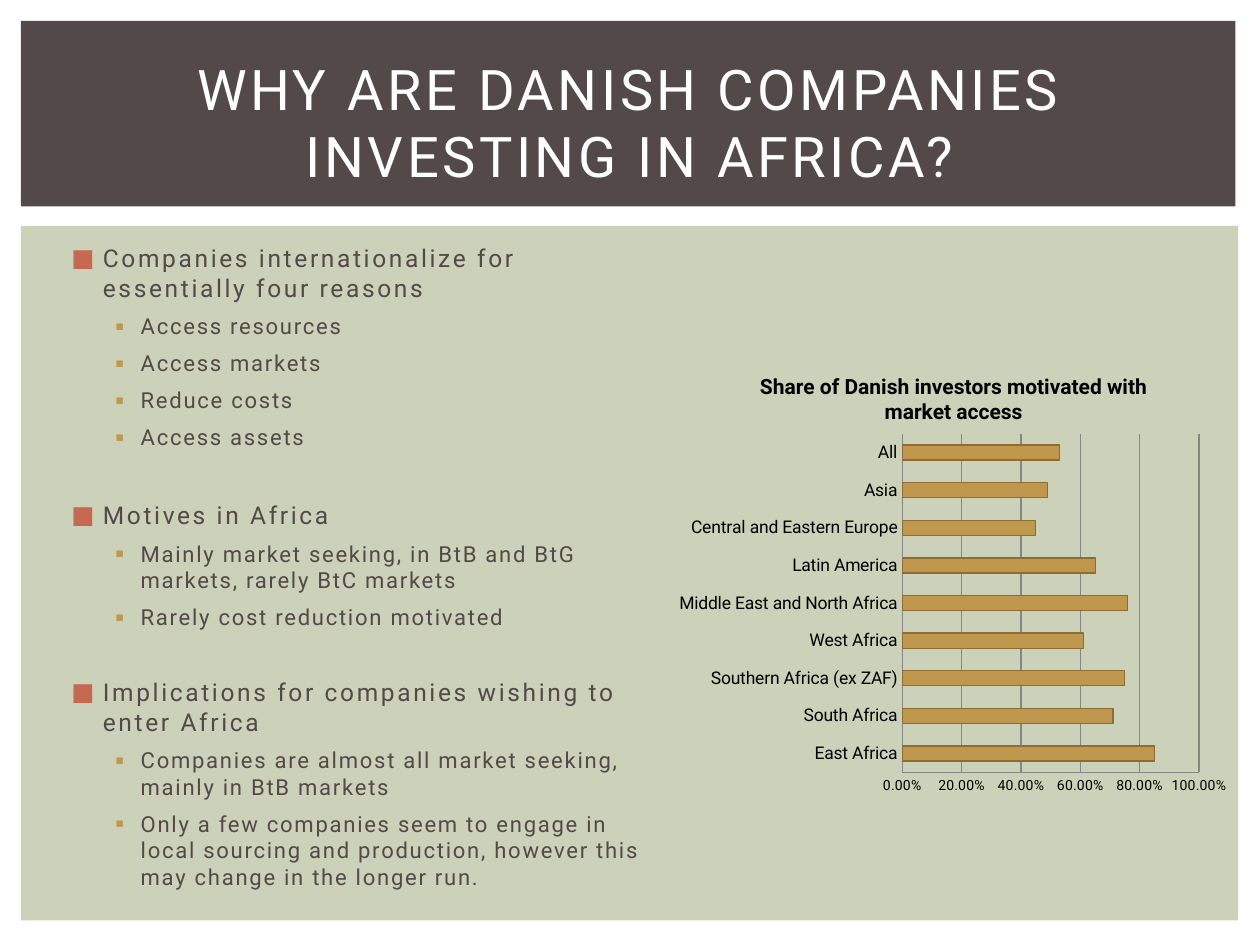
from lxml import etree
from pptx import Presentation
from pptx.chart.data import CategoryChartData
from pptx.dml.color import RGBColor
from pptx.enum.chart import XL_CHART_TYPE, XL_TICK_MARK
from pptx.enum.shapes import MSO_SHAPE
from pptx.enum.text import MSO_ANCHOR, MSO_AUTO_SIZE, PP_ALIGN
from pptx.oxml import parse_xml
from pptx.oxml.ns import nsdecls, qn
from pptx.util import Pt

BAR_CLUSTERED = XL_CHART_TYPE.BAR_CLUSTERED
NO_TICK = XL_TICK_MARK.NONE
RECTANGLE = MSO_SHAPE.RECTANGLE
TOP, MIDDLE = MSO_ANCHOR.TOP, MSO_ANCHOR.MIDDLE
NO_AUTOFIT = MSO_AUTO_SIZE.NONE
CENTER, LEFT = PP_ALIGN.CENTER, PP_ALIGN.LEFT

FONT = "Roboto"
DARK, SAGE, WHITE, BLACK = "534949", "CCD1B9", "FFFFFF", "000000"
RED, GOLD, GOLD_EDGE, GRID = "C66951", "BF974D", "8C6E34", "868686"

TITLE = "WHY ARE DANISH COMPANIES INVESTING IN AFRICA?"
SECTIONS = [
    (6, "Companies internationalize for essentially four reasons", [
        "Access resources", "Access markets", "Reduce costs", "Access assets"]),
    (28.5, "Motives in Africa", [
        "Mainly market seeking, in BtB and BtG markets, rarely BtC markets",
        "Rarely cost reduction motivated"]),
    (27, "Implications for companies wishing to enter Africa", [
        "Companies are almost all market seeking, mainly in BtB markets",
        "Only a few companies seem to engage in local sourcing and production, "
        "however this may change in the longer run."]),
]
LEVELS = [
    {"margin": 21.6, "indent": -18, "bullet": "■", "color": RED, "size": 14, "spacing": 1.5},
    {"margin": 43.2, "indent": -14.4, "bullet": "▪", "color": GOLD, "size": 12.6, "spacing": 1},
]
CHART_TITLE = "Share of Danish investors motivated with market access"
SHARES = {
    "East Africa": 0.85,
    "South Africa": 0.71,
    "Southern Africa (ex ZAF)": 0.75,
    "West Africa": 0.61,
    "Middle East and North Africa": 0.76,
    "Latin America": 0.65,
    "Central and Eastern Europe": 0.45,
    "Asia": 0.49,
    "All": 0.53,
}
PLOT_BOX = {"x": 0.41, "y": 0.18, "w": 0.52, "h": 0.75}


def rgb(color):
    """Turn a hex string into a colour."""
    return RGBColor.from_string(color)


def place(shape, box):
    """Move and size a shape to a box in points."""
    shape.left, shape.top, shape.width, shape.height = map(Pt, box)


def style_font(font, size, color, bold=False):
    """Set the face, size, colour and weight of a font."""
    font.name = FONT
    font.size = Pt(size)
    font.bold = bold
    font.color.rgb = rgb(color)


def style_runs(paragraph, size, color, spacing):
    """Format all runs of a paragraph, with letter spacing in points."""
    for run in paragraph.runs:
        style_font(run.font, size, color)
        run.font._element.set("spc", str(int(spacing * 100)))


def add_panel(slide, box, color):
    """Add a plain rectangle behind the title and body."""
    panel = slide.shapes.add_shape(RECTANGLE, *map(Pt, box))
    panel.shadow.inherit = False
    panel.fill.solid()
    panel.fill.fore_color.rgb = rgb(color)
    panel.line.fill.background()
    slide.shapes.title.element.addprevious(panel.element)


def fill_title(slide, box):
    """Write the heading in the title placeholder."""
    title = slide.shapes.title
    place(title, box)
    text_frame = title.text_frame
    text_frame.text = TITLE
    text_frame.word_wrap = True
    text_frame.auto_size = NO_AUTOFIT
    text_frame.vertical_anchor = MIDDLE
    paragraph = text_frame.paragraphs[0]
    paragraph.alignment = CENTER
    style_runs(paragraph, 32, WHITE, 2)


def format_item(paragraph, level, space_before):
    """Give a list paragraph the indent, bullet and type of its level."""
    style = LEVELS[level]
    paragraph.level = level
    paragraph.alignment = LEFT
    paragraph.space_before = Pt(space_before)
    properties = paragraph._element.get_or_add_pPr()
    properties.set("marL", str(Pt(style["margin"])))
    properties.set("indent", str(Pt(style["indent"])))
    color = etree.SubElement(properties, qn("a:buClr"))
    etree.SubElement(color, qn("a:srgbClr"), val=style["color"])
    etree.SubElement(properties, qn("a:buFont"), typeface=FONT)
    etree.SubElement(properties, qn("a:buChar"), char=style["bullet"])
    style_runs(paragraph, style["size"], DARK, style["spacing"])


def fill_body(slide, box):
    """Write the two-level list in the body placeholder."""
    body = slide.placeholders[1]
    place(body, box)
    items = []
    for gap, heading, points in SECTIONS:
        items.append((heading, 0, gap))
        items += [(point, 1, 6) for point in points]
    text_frame = body.text_frame
    text_frame.text = "\n".join(text for text, _, _ in items)
    text_frame.word_wrap = True
    text_frame.auto_size = NO_AUTOFIT
    text_frame.vertical_anchor = TOP
    for paragraph, (_, level, gap) in zip(text_frame.paragraphs, items):
        format_item(paragraph, level, gap)


def set_plot_box(chart):
    """Fix the inner plot area as fractions of the chart."""
    plot_area = chart._chartSpace.chart.plotArea
    for layout in plot_area.findall(qn("c:layout")):
        plot_area.remove(layout)
    modes = "".join(f'<c:{key}Mode val="edge"/>' for key in "xy")
    sizes = "".join(f'<c:{key} val="{value}"/>' for key, value in PLOT_BOX.items())
    plot_area.insert(0, parse_xml(
        f'<c:layout {nsdecls("c")}><c:manualLayout><c:layoutTarget val="inner"/>'
        f"{modes}{sizes}</c:manualLayout></c:layout>"))


def add_share_chart(slide, box):
    """Add the bar chart of market access shares."""
    data = CategoryChartData(number_format="0.00%")
    data.categories = list(SHARES)
    data.add_series("Series 1", list(SHARES.values()))
    chart = slide.shapes.add_chart(BAR_CLUSTERED, *map(Pt, box), data).chart
    style_font(chart.font, 10, BLACK)
    chart.has_legend = False
    chart.has_title = True
    chart.chart_title.include_in_layout = False
    chart.chart_title.text_frame.text = CHART_TITLE
    style_font(chart.chart_title.text_frame.paragraphs[0].runs[0].font, 12, BLACK, True)
    set_plot_box(chart)

    plot = chart.plots[0]
    plot.gap_width = 150
    plot.vary_by_categories = False
    bars = plot.series[0].format
    bars.fill.solid()
    bars.fill.fore_color.rgb = rgb(GOLD)
    bars.line.color.rgb = rgb(GOLD_EDGE)
    bars.line.width = Pt(0.75)

    values = chart.value_axis
    values.minimum_scale, values.maximum_scale, values.major_unit = 0, 1, 0.2
    values.has_major_gridlines = True
    values.tick_labels.number_format = "0.00%"
    values.tick_labels.number_format_is_linked = False
    gridlines = values.major_gridlines.format.line
    for axis, size in ((chart.category_axis, 10), (values, 8)):
        axis.major_tick_mark = axis.minor_tick_mark = NO_TICK
        style_font(axis.tick_labels.font, size, BLACK)
    for line in (gridlines, values.format.line, chart.category_axis.format.line):
        line.color.rgb = rgb(GRID)
        line.width = Pt(0.75)


def main():
    """Build the slide and save it."""
    presentation = Presentation()
    presentation.slide_width, presentation.slide_height = Pt(720), Pt(540)
    slide = presentation.slides.add_slide(presentation.slide_layouts[1])
    add_panel(slide, (12, 129, 695.5, 397), SAGE)
    add_panel(slide, (12, 12, 694, 106), DARK)
    fill_title(slide, (30, 28, 660, 83))
    add_share_chart(slide, (382, 201.5, 326, 258))
    fill_body(slide, (30, 135.5, 353, 404.5))
    presentation.save("out.pptx")


if __name__ == "__main__":
    main()
